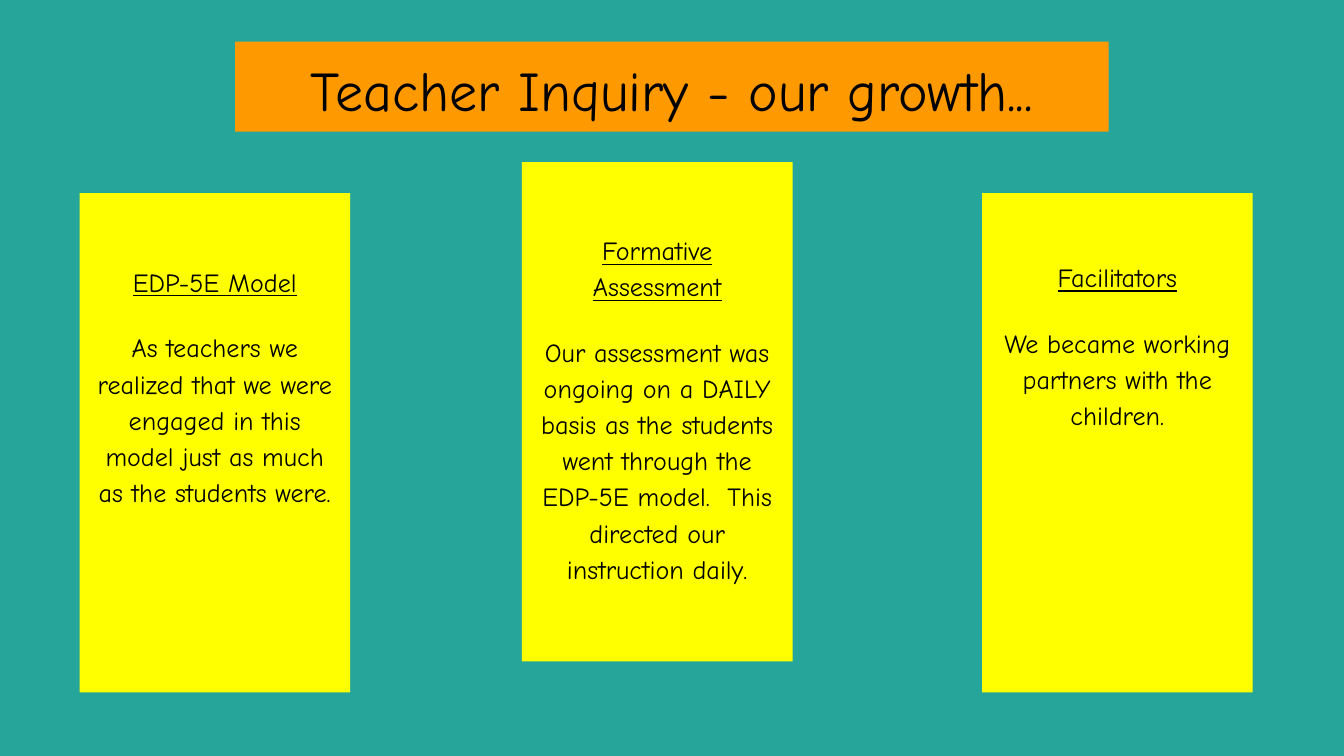
from dataclasses import dataclass

import pptx
import pptx.dml.color
import pptx.enum.shapes
import pptx.enum.text
import pptx.util

Pt = pptx.util.Pt


@dataclass(frozen=True)
class Theme:
    background: str = "26A69A"
    banner: str = "FF9900"
    card: str = "FFFF00"
    text: str = "000000"
    font: str = "Comic Neue"
    title_size: float = 30
    body_size: float = 14
    inset: float = 7.2
    line_spacing: float = 1.15
    paragraph_gap: float = 16


class SlideBuilder:
    def __init__(self, slide, theme):
        self.slide = slide
        self.theme = theme

    def background(self):
        fill = self.slide.background.fill
        fill.solid()
        fill.fore_color.rgb = pptx.dml.color.RGBColor.from_string(self.theme.background)

    def panel(self, left, top, width, height, color, top_inset):
        """Add a plain filled rectangle and return its text frame."""
        shape = self.slide.shapes.add_shape(
            pptx.enum.shapes.MSO_SHAPE.RECTANGLE, Pt(left), Pt(top), Pt(width), Pt(height)
        )
        shape.shadow.inherit = False
        shape.fill.solid()
        shape.fill.fore_color.rgb = pptx.dml.color.RGBColor.from_string(color)
        shape.line.fill.background()
        frame = shape.text_frame
        frame.word_wrap = True
        frame.vertical_anchor = pptx.enum.text.MSO_ANCHOR.TOP
        frame.margin_left = frame.margin_right = frame.margin_bottom = Pt(self.theme.inset)
        frame.margin_top = Pt(top_inset)
        return frame

    def style(self, paragraph, size, underline=False):
        paragraph.alignment = pptx.enum.text.PP_ALIGN.CENTER
        for run in paragraph.runs:
            run.font.name = self.theme.font
            run.font.size = Pt(size)
            run.font.underline = underline
            run.font.color.rgb = pptx.dml.color.RGBColor.from_string(self.theme.text)

    def title(self, text, left, top, width, height):
        frame = self.panel(left, top, width, height, self.theme.banner, self.theme.inset)
        frame.text = text
        self.style(frame.paragraphs[0], self.theme.title_size)

    def card(self, heading, body, left, top, width, height, top_inset):
        frame = self.panel(left, top, width, height, self.theme.card, top_inset)
        frame.text = f"{heading}\n{body}"
        for index, paragraph in enumerate(frame.paragraphs):
            paragraph.line_spacing = self.theme.line_spacing
            paragraph.space_after = Pt(self.theme.paragraph_gap)
            self.style(paragraph, self.theme.body_size, underline=index == 0)


CARD_WIDTH, CARD_HEIGHT = 145, 267.5
# heading, body, left, top, top inset
CARDS = [
    ("EDP-5E Model",
     "As teachers we realized that we were engaged in this model just as much "
     "as the students were.",
     42.6, 103.5, 36.5),
    ("Formative Assessment",
     "Our assessment was ongoing on a DAILY basis as the students went through "
     "the EDP-5E model.  This directed our instruction daily.",
     279.6, 86.8, 36.5),
    ("Facilitators",
     "We became working partners with the children.",
     526.1, 103.5, 34),
]


def main():
    presentation = pptx.Presentation()
    presentation.slide_width = Pt(720)
    presentation.slide_height = Pt(405)
    slide = presentation.slides.add_slide(presentation.slide_layouts[6])

    builder = SlideBuilder(slide, Theme())
    builder.background()
    builder.title("Teacher Inquiry - our growth...", 126, 22.4, 468, 48.2)
    for heading, body, left, top, top_inset in CARDS:
        builder.card(heading, body, left, top, CARD_WIDTH, CARD_HEIGHT, top_inset)

    presentation.save("out.pptx")


if __name__ == "__main__":
    main()
